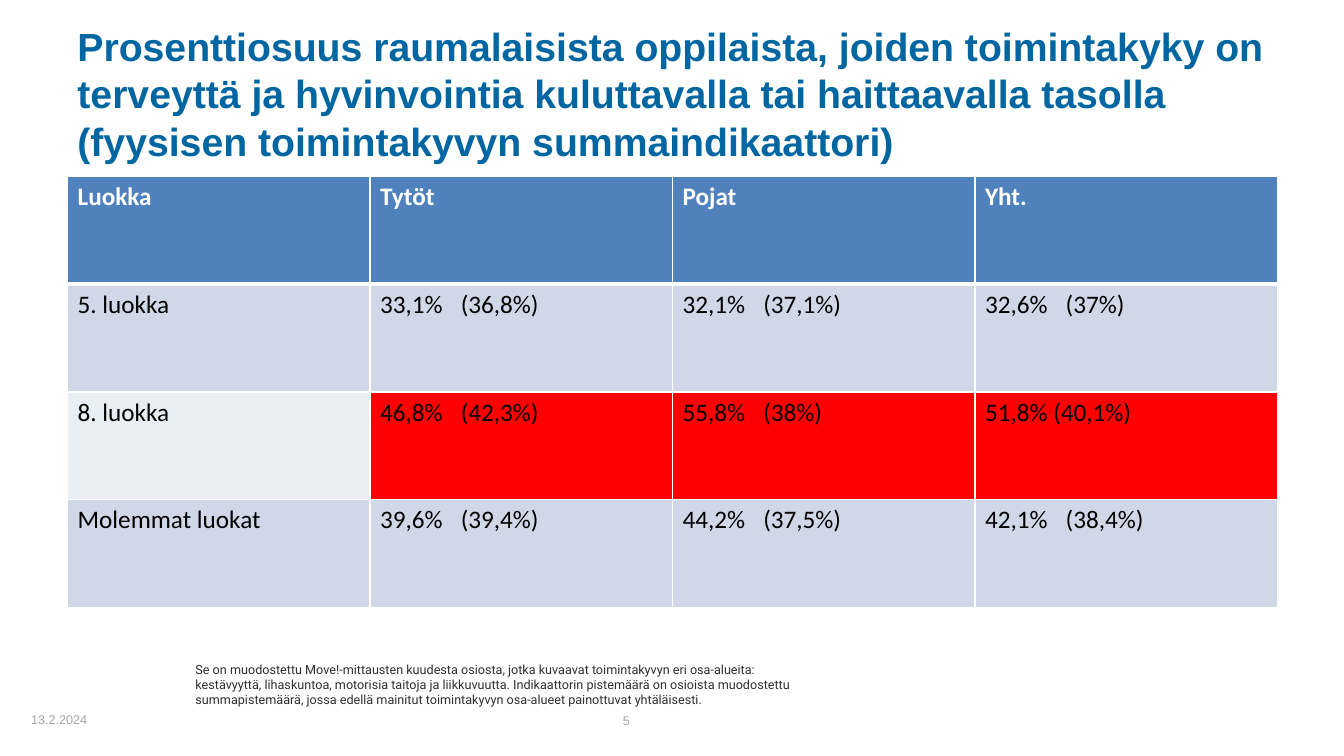
import pptx
import pptx.dml.color
import pptx.enum.text
import pptx.oxml
import pptx.oxml.ns
import pptx.util
from pptx.util import Inches

RGBColor = pptx.dml.color.RGBColor
WHITE = RGBColor(0xFF, 0xFF, 0xFF)
BLACK = RGBColor(0x00, 0x00, 0x00)
TITLE_BLUE = RGBColor(0x00, 0x66, 0xA1)
HEADER_BLUE = RGBColor(0x4F, 0x81, 0xBD)
BAND_DARK = RGBColor(0xD0, 0xD8, 0xE8)
BAND_LIGHT = RGBColor(0xE9, 0xED, 0xF4)
ALERT_RED = RGBColor(0xFF, 0x00, 0x00)
FOOTER_GRAY = RGBColor(0xA6, 0xA6, 0xA6)
NOTE_GRAY = RGBColor(0x30, 0x30, 0x30)

TITLE = ("Prosenttiosuus raumalaisista oppilaista, joiden toimintakyky on "
         "terveyttä ja hyvinvointia kuluttavalla tai haittaavalla tasolla\v"
         "(fyysisen toimintakyvyn summaindikaattori)")
NOTE = ("Se on muodostettu Move!-mittausten kuudesta osiosta, jotka kuvaavat "
        "toimintakyvyn eri osa-alueita: kestävyyttä, lihaskuntoa, motorisia "
        "taitoja ja liikkuvuutta. Indikaattorin pistemäärä on osioista "
        "muodostettu summapistemäärä, jossa edellä mainitut toimintakyvyn "
        "osa-alueet painottuvat yhtäläisesti.")
RESULTS = [
    ["Luokka", "Tytöt", "Pojat", "Yht."],
    ["5. luokka", "33,1%\t(36,8%)", "32,1%\t(37,1%)", "32,6%\t(37%)"],
    ["8. luokka", "46,8%\t(42,3%)", "55,8%\t(38%)", "51,8% (40,1%)"],
    ["Molemmat luokat", "39,6%\t(39,4%)", "44,2%\t(37,5%)", "42,1%\t(38,4%)"],
]


class SlideBuilder:
    STYLES = {
        "title": {"name": "Arial", "size": 28, "bold": True, "color": TITLE_BLUE},
        "header": {"name": "Calibri", "size": 18, "bold": True, "color": WHITE},
        "body": {"name": "Calibri", "size": 18, "bold": False, "color": BLACK},
        "note": {"name": "Roboto", "size": 9, "bold": False, "color": NOTE_GRAY},
        "footer": {"name": "Arial", "size": 9, "bold": False, "color": FOOTER_GRAY},
    }

    def __init__(self, slide):
        self.slide = slide

    def apply_style(self, paragraph, style):
        for run in paragraph.runs:
            for attribute, value in self.STYLES[style].items():
                if attribute == "color":
                    run.font.color.rgb = value
                elif attribute == "size":
                    run.font.size = pptx.util.Pt(value)
                else:
                    setattr(run.font, attribute, value)

    def text(self, content, style, left, top, width, height):
        box = self.slide.shapes.add_textbox(
            Inches(left), Inches(top), Inches(width), Inches(height))
        frame = box.text_frame
        frame.word_wrap = True
        frame.vertical_anchor = pptx.enum.text.MSO_ANCHOR.MIDDLE
        paragraph = frame.paragraphs[0]
        paragraph.text = content
        self.apply_style(paragraph, style)

    def borders(self, cell, widths):
        """Draw white borders; widths maps L, R, T and B to points."""
        properties = cell._tc.get_or_add_tcPr()
        for side, points in widths.items():
            properties.append(pptx.oxml.parse_xml(
                f'<a:ln{side} {pptx.oxml.ns.nsdecls("a")} w="{pptx.util.Pt(points)}">'
                f'<a:solidFill><a:srgbClr val="{WHITE}"/></a:solidFill></a:ln{side}>'))

    def tab_stop(self, paragraph, position):
        paragraph._p.get_or_add_pPr().append(pptx.oxml.parse_xml(
            f'<a:tabLst {pptx.oxml.ns.nsdecls("a")}>'
            f'<a:tab pos="{Inches(position)}" algn="l"/></a:tabLst>'))

    def cell_fill(self, row, column):
        if row == 0:
            return HEADER_BLUE
        if row == 2:
            return ALERT_RED if column else BAND_LIGHT
        return BAND_DARK

    def table(self, rows, left, top, width, height):
        results = self.slide.shapes.add_table(
            len(rows), len(rows[0]),
            Inches(left), Inches(top), Inches(width), Inches(height)).table
        results.horz_banding = False
        for r, row in enumerate(rows):
            for c, value in enumerate(row):
                cell = results.cell(r, c)
                self.borders(cell, {"L": 1, "R": 1, "T": 3 if r == 1 else 1,
                                    "B": 3 if r == 0 else 1})
                cell.fill.solid()
                cell.fill.fore_color.rgb = self.cell_fill(r, c)
                paragraph = cell.text_frame.paragraphs[0]
                if "\t" in value:
                    self.tab_stop(paragraph, 0.8)
                paragraph.text = value
                self.apply_style(paragraph, "body" if r else "header")


def main():
    presentation = pptx.Presentation()
    presentation.slide_width = Inches(13.33)
    presentation.slide_height = Inches(7.5)
    builder = SlideBuilder(
        presentation.slides.add_slide(presentation.slide_layouts[6]))
    builder.text(TITLE, "title", 0.67, 0.3, 12, 1.25)
    builder.table(RESULTS, 0.67, 1.75, 12, 4.28)
    builder.text("13.2.2024", "footer", 0.21, 6.94, 1.17, 0.4)
    builder.text(NOTE, "note", 1.84, 6.23, 6.25, 1.12)
    builder.text("5", "footer", 6.08, 6.95, 3.11, 0.4)
    presentation.save("out.pptx")


if __name__ == "__main__":
    main()
